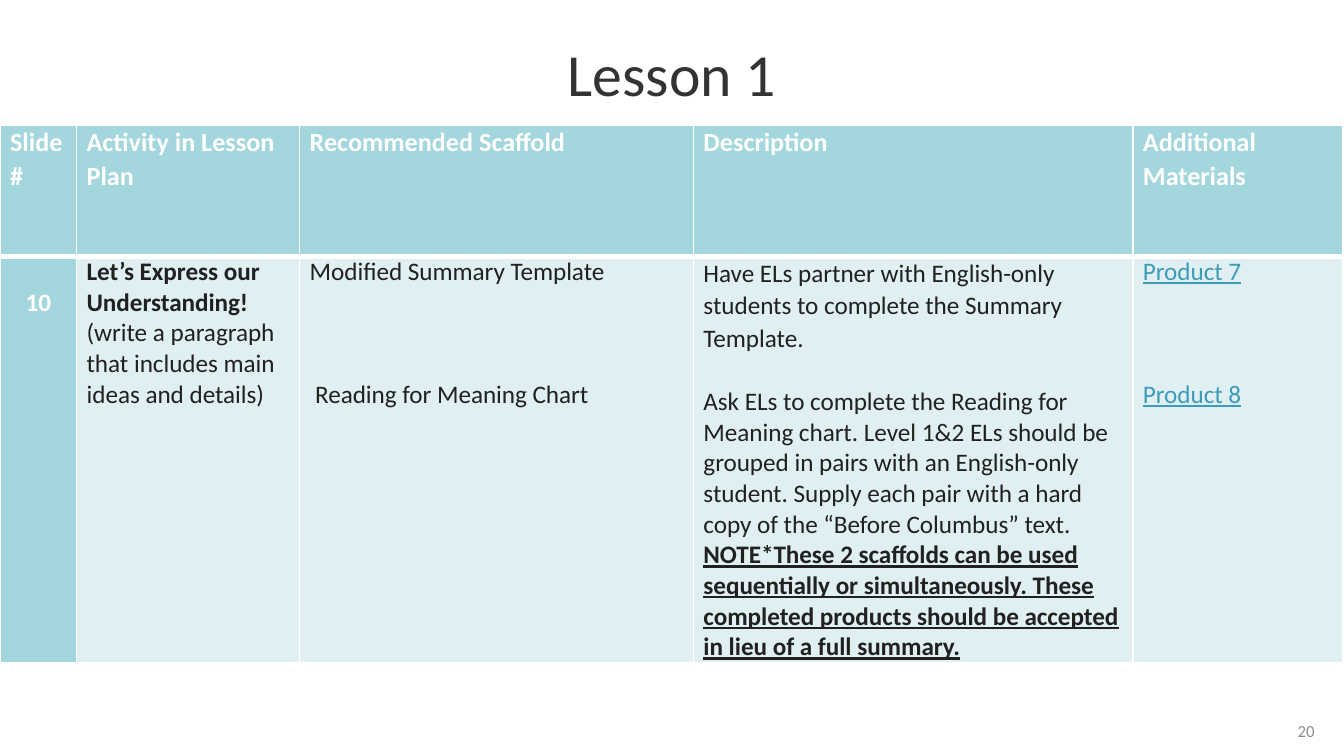
from dataclasses import dataclass

from lxml import etree
from pptx import Presentation
from pptx.dml.color import RGBColor
from pptx.enum.text import MSO_ANCHOR, PP_ALIGN
from pptx.oxml.ns import qn
from pptx.util import Inches, Pt

CENTER, LEFT, RIGHT = PP_ALIGN.CENTER, PP_ALIGN.LEFT, PP_ALIGN.RIGHT
MIDDLE, TOP = MSO_ANCHOR.MIDDLE, MSO_ANCHOR.TOP
W = 10
H = W * 9 / 16


@dataclass(frozen=True)
class Theme:
    font: str = "Calibri"
    heading: str = "333333"
    ink: str = "212121"
    white: str = "FFFFFF"
    link: str = "3D9BBA"
    muted: str = "8D8D8D"
    teal: str = "A3D6DD"
    pale: str = "E0F0F2"
    title_size: float = 32
    header_size: float = 14
    body_size: float = 13.5
    number_size: float = 9
    cell_margin: float = 5.4


THEME = Theme()
GAP = 3 * 1.22 * THEME.body_size

COLUMNS = [0.57, 1.66, 2.93, 3.27, 1.56]
ROWS = [0.98, 2.97]
HEADERS = ["Slide #", "Activity in Lesson Plan", "Recommended Scaffold",
           "Description", "Additional Materials"]
LINK = dict(color=THEME.link, underline=True)
ACTIVITY = [
    [dict(text="10", color=THEME.white, bold=True, align=CENTER, spacing=2)],
    [dict(text="Let’s Express our Understanding!", bold=True),
     dict(text="(write a paragraph that includes main ideas and details)")],
    [dict(text="Modified Summary Template"),
     dict(text="Reading for Meaning Chart", before=GAP, indent=0.04)],
    [dict(text="Have ELs partner with English-only students to complete "
               "the Summary Template.", spacing=1.06),
     dict(text="Ask ELs to complete the Reading for Meaning chart. Level 1&2 "
               "ELs should be grouped in pairs with an English-only student. "
               "Supply each pair with a hard copy of the “Before Columbus” "
               "text.", before=GAP / 3 * 1.06),
     dict(text="NOTE*These 2 scaffolds can be used sequentially or "
               "simultaneously. These completed products should be accepted "
               "in lieu of a full summary.", bold=True, underline=True)],
    [dict(text="Product 7", **LINK),
     dict(text="Product 8", before=GAP, **LINK)],
]


def write(p, text, size=THEME.body_size, color=THEME.ink, bold=False,
          underline=False, align=LEFT, spacing=1.0, before=0, indent=0):
    p.alignment = align
    p.line_spacing = spacing
    if before:
        p.space_before = Pt(round(before, 1))
    if indent:
        p._p.get_or_add_pPr().set("marL", str(Inches(indent)))
    r = p.add_run()
    r.text = text
    r.font.name = THEME.font
    r.font.size = Pt(size)
    r.font.bold = bold
    r.font.underline = underline
    r.font.color.rgb = RGBColor.from_string(color)


def border(cell, bottom):
    tc_pr = cell._tc.get_or_add_tcPr()
    sides = [("lnL", 1), ("lnR", 1), ("lnT", 1), ("lnB", bottom)]
    for i, (side, width) in enumerate(sides):
        ln = etree.Element(qn(f"a:{side}"), w=str(Pt(width)))
        fill = etree.SubElement(ln, qn("a:solidFill"))
        etree.SubElement(fill, qn("a:srgbClr"), val=THEME.white)
        tc_pr.insert(i, ln)


def fill_cell(cell, paragraphs, color, bottom):
    cell.margin_left = cell.margin_right = Pt(THEME.cell_margin)
    cell.margin_top = cell.margin_bottom = 0
    cell.vertical_anchor = TOP
    cell.fill.solid()
    cell.fill.fore_color.rgb = RGBColor.from_string(color)
    border(cell, bottom)
    tf = cell.text_frame
    for i, paragraph in enumerate(paragraphs):
        write(tf.add_paragraph() if i else tf.paragraphs[0], **paragraph)


def place_title(s, x, y, w, h):
    title = s.shapes.title
    title.left, title.top, title.width, title.height = map(Inches, (x, y, w, h))
    tf = title.text_frame
    tf.vertical_anchor = MIDDLE
    write(tf.paragraphs[0], "Lesson 1", size=THEME.title_size,
          color=THEME.heading, align=CENTER, spacing=0.9)


def place_table(s, x, y, w, h):
    table = s.shapes.add_table(len(ROWS), len(COLUMNS),
                               *map(Inches, (x, y, w, h))).table
    for column, share in zip(table.columns, COLUMNS):
        column.width = Inches(w * share / sum(COLUMNS))
    for row, share in zip(table.rows, ROWS):
        row.height = Inches(h * share / sum(ROWS))
    for i, (header, paragraphs) in enumerate(zip(HEADERS, ACTIVITY)):
        heading = dict(text=header, size=THEME.header_size, color=THEME.white,
                       bold=True, spacing=1.06)
        fill_cell(table.cell(0, i), [heading], THEME.teal, 3)
        fill_cell(table.cell(1, i), paragraphs,
                  THEME.pale if i else THEME.teal, 1)


def place_number(s, x, y, w, h):
    tf = s.shapes.add_textbox(*map(Inches, (x, y, w, h))).text_frame
    tf.word_wrap = True
    tf.vertical_anchor = MIDDLE
    write(tf.paragraphs[0], "20", size=THEME.number_size,
          color=THEME.muted, align=RIGHT)


def main():
    prs = Presentation()
    prs.slide_width, prs.slide_height = Inches(W), Inches(H)
    s = prs.slides.add_slide(prs.slide_layouts[5])
    place_title(s, 0, 0, W, 0.205 * H)
    place_table(s, 0, 0.165 * H, sum(COLUMNS), sum(ROWS))
    place_number(s, 0.744 * W, 0.933 * H, 0.244 * W, 0.067 * H)
    prs.save("out.pptx")


if __name__ == "__main__":
    main()
